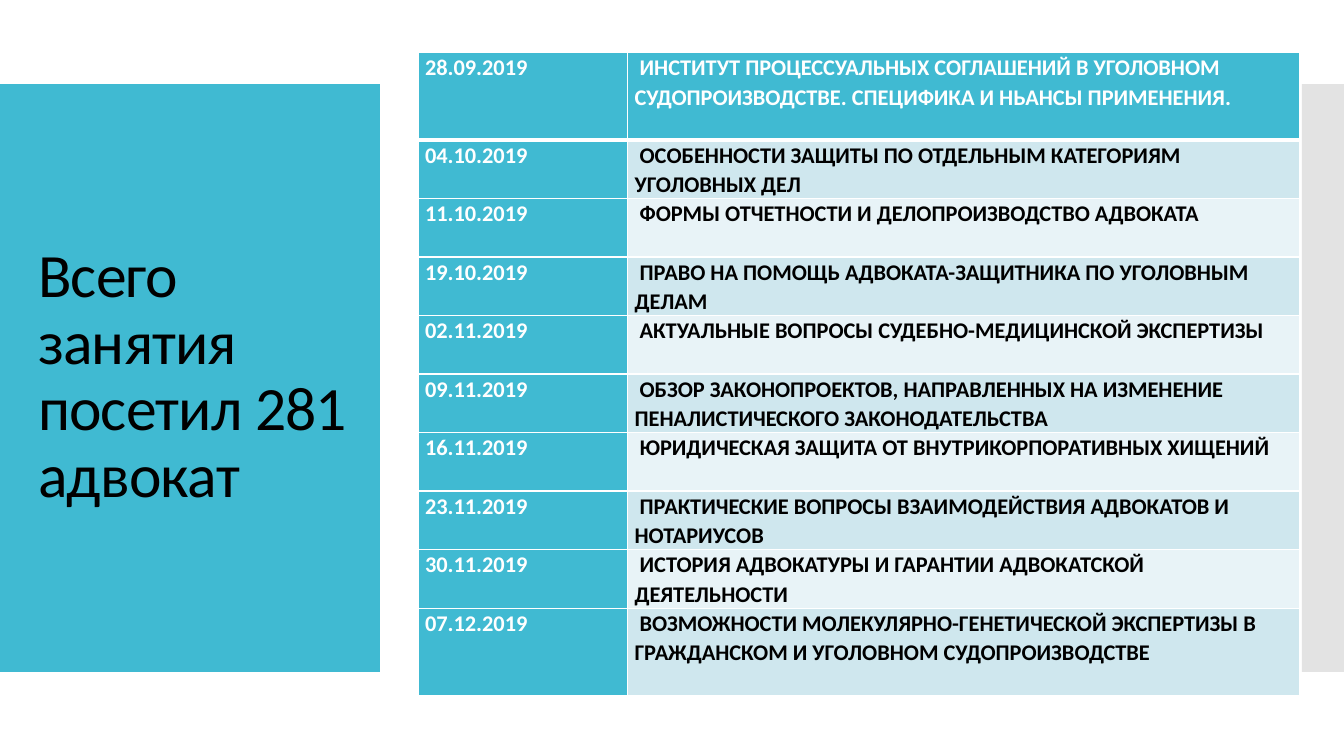
from dataclasses import dataclass

from lxml import etree
from pptx import Presentation
from pptx.dml.color import RGBColor
from pptx.enum.shapes import MSO_SHAPE
from pptx.enum.text import MSO_ANCHOR, MSO_AUTO_SIZE, PP_ALIGN
from pptx.oxml.ns import qn
from pptx.util import Pt

RECTANGLE = MSO_SHAPE.RECTANGLE
MIDDLE, TOP = MSO_ANCHOR.MIDDLE, MSO_ANCHOR.TOP
NO_AUTOFIT = MSO_AUTO_SIZE.NONE
LEFT = PP_ALIGN.LEFT
TITLE_ONLY = 5


@dataclass(frozen=True)
class Theme:
    font: str = "Calibri"
    title_size: float = 44
    table_size: float = 16
    accent: str = "40BAD2"
    side: str = "C8C8C8"
    dark: str = "000000"
    light: str = "FFFFFF"
    bands: tuple = ("E8F3F7", "CFE7EE")


def apply(target, values):
    for name, value in values.items():
        setattr(target, name, value)


class SlideBuilder:
    def __init__(self, slide, theme):
        self.slide = slide
        self.theme = theme

    def fill_text(self, paragraph, text, size, color, bold, spacing):
        paragraph.text = text
        apply(paragraph, {"alignment": LEFT, "line_spacing": spacing})
        font = paragraph.runs[0].font
        apply(font, {"name": self.theme.font, "size": Pt(size), "bold": bold})
        font.color.rgb = RGBColor.from_string(color)

    def panel(self, box, color, opacity=100):
        panel = self.slide.shapes.add_shape(RECTANGLE, *map(Pt, box))
        panel.shadow.inherit = False
        panel.line.fill.background()
        panel.fill.solid()
        panel.fill.fore_color.rgb = RGBColor.from_string(color)
        if opacity < 100:
            tint = panel._element.spPr.find(".//" + qn("a:srgbClr"))
            etree.SubElement(tint, qn("a:alpha"), val=str(opacity * 1000))

    def title(self, text, box):
        heading = self.slide.shapes.title
        apply(heading, dict(zip(("left", "top", "width", "height"), map(Pt, box))))
        frame = heading.text_frame
        apply(frame, {"word_wrap": True, "auto_size": NO_AUTOFIT,
                      "vertical_anchor": MIDDLE})
        self.fill_text(frame.paragraphs[0], text, self.theme.title_size,
                       self.theme.dark, False, 0.9)
        frame.paragraphs[0].runs[0]._r.get_or_add_rPr().set("spc", "-60")
        self.slide.shapes._spTree.append(heading._element)

    def border(self, cell, side, width):
        line = etree.SubElement(cell._tc.get_or_add_tcPr(), qn(f"a:ln{side}"),
                                w=str(Pt(width)))
        fill = etree.SubElement(line, qn("a:solidFill"))
        etree.SubElement(fill, qn("a:srgbClr"), val=self.theme.light)

    def cell(self, cell, text, row, column):
        is_label = row == 0 or column == 0
        apply(cell, {"margin_left": Pt(5), "margin_right": Pt(5), "margin_top": 0,
                     "margin_bottom": 0, "vertical_anchor": TOP})
        widths = {"L": 1, "R": 1, "T": 3 if row == 1 else 1, "B": 3 if row == 0 else 1}
        for side, width in widths.items():
            self.border(cell, side, width)
        cell.fill.solid()
        cell.fill.fore_color.rgb = RGBColor.from_string(
            self.theme.accent if is_label else self.theme.bands[row % 2])
        paragraph = cell.text_frame.paragraphs[0]
        self.fill_text(paragraph, text, self.theme.table_size,
                       self.theme.light if is_label else self.theme.dark, True, 1.07)
        if column == 1:
            paragraph._p.get_or_add_pPr().set("indent", str(Pt(3.6)))

    def table(self, rows, left, top, widths, heights):
        table = self.slide.shapes.add_table(
            len(rows), len(widths), Pt(left), Pt(top),
            Pt(sum(widths)), Pt(sum(heights))).table
        for column, width in zip(table.columns, widths):
            column.width = Pt(width)
        for table_row, height in zip(table.rows, heights):
            table_row.height = Pt(height)
        for row, texts in enumerate(rows):
            for column, text in enumerate(texts):
                self.cell(table.cell(row, column), text, row, column)


LESSONS = [
    ("28.09.2019", "ИНСТИТУТ ПРОЦЕССУАЛЬНЫХ СОГЛАШЕНИЙ В УГОЛОВНОМ "
                   "СУДОПРОИЗВОДСТВЕ. СПЕЦИФИКА И НЬАНСЫ ПРИМЕНЕНИЯ."),
    ("04.10.2019", "ОСОБЕННОСТИ ЗАЩИТЫ ПО ОТДЕЛЬНЫМ КАТЕГОРИЯМ УГОЛОВНЫХ ДЕЛ"),
    ("11.10.2019", "ФОРМЫ ОТЧЕТНОСТИ И ДЕЛОПРОИЗВОДСТВО АДВОКАТА"),
    ("19.10.2019", "ПРАВО НА ПОМОЩЬ АДВОКАТА-ЗАЩИТНИКА ПО УГОЛОВНЫМ ДЕЛАМ"),
    ("02.11.2019", "АКТУАЛЬНЫЕ ВОПРОСЫ СУДЕБНО-МЕДИЦИНСКОЙ ЭКСПЕРТИЗЫ"),
    ("09.11.2019", "ОБЗОР ЗАКОНОПРОЕКТОВ, НАПРАВЛЕННЫХ НА ИЗМЕНЕНИЕ "
                   "ПЕНАЛИСТИЧЕСКОГО ЗАКОНОДАТЕЛЬСТВА"),
    ("16.11.2019", "ЮРИДИЧЕСКАЯ ЗАЩИТА ОТ ВНУТРИКОРПОРАТИВНЫХ ХИЩЕНИЙ"),
    ("23.11.2019", "ПРАКТИЧЕСКИЕ ВОПРОСЫ ВЗАИМОДЕЙСТВИЯ АДВОКАТОВ И НОТАРИУСОВ"),
    ("30.11.2019", "ИСТОРИЯ АДВОКАТУРЫ И ГАРАНТИИ АДВОКАТСКОЙ ДЕЯТЕЛЬНОСТИ"),
    ("07.12.2019", "ВОЗМОЖНОСТИ МОЛЕКУЛЯРНО-ГЕНЕТИЧЕСКОЙ ЭКСПЕРТИЗЫ В "
                   "ГРАЖДАНСКОМ И УГОЛОВНОМ СУДОПРОИЗВОДСТВЕ"),
]


def main():
    deck = Presentation()
    apply(deck, {"slide_width": Pt(960), "slide_height": Pt(540)})
    theme = Theme()
    builder = SlideBuilder(deck.slides.add_slide(deck.slide_layouts[TITLE_ONLY]), theme)
    builder.panel((0, 60, 271.4, 420), theme.accent)
    builder.panel((930, 60, 30, 420), theme.side, 50)
    builder.title("Всего занятия посетил 281 адвокат", (20, 88.6, 244, 362))
    tall, short = 62.5, 41.7
    heights = [tall] + [short] * (len(LESSONS) - 2) + [tall]
    builder.table(LESSONS, 298.6, 37.6, (149.7, 480), heights)
    deck.save("out.pptx")


if __name__ == "__main__":
    main()
